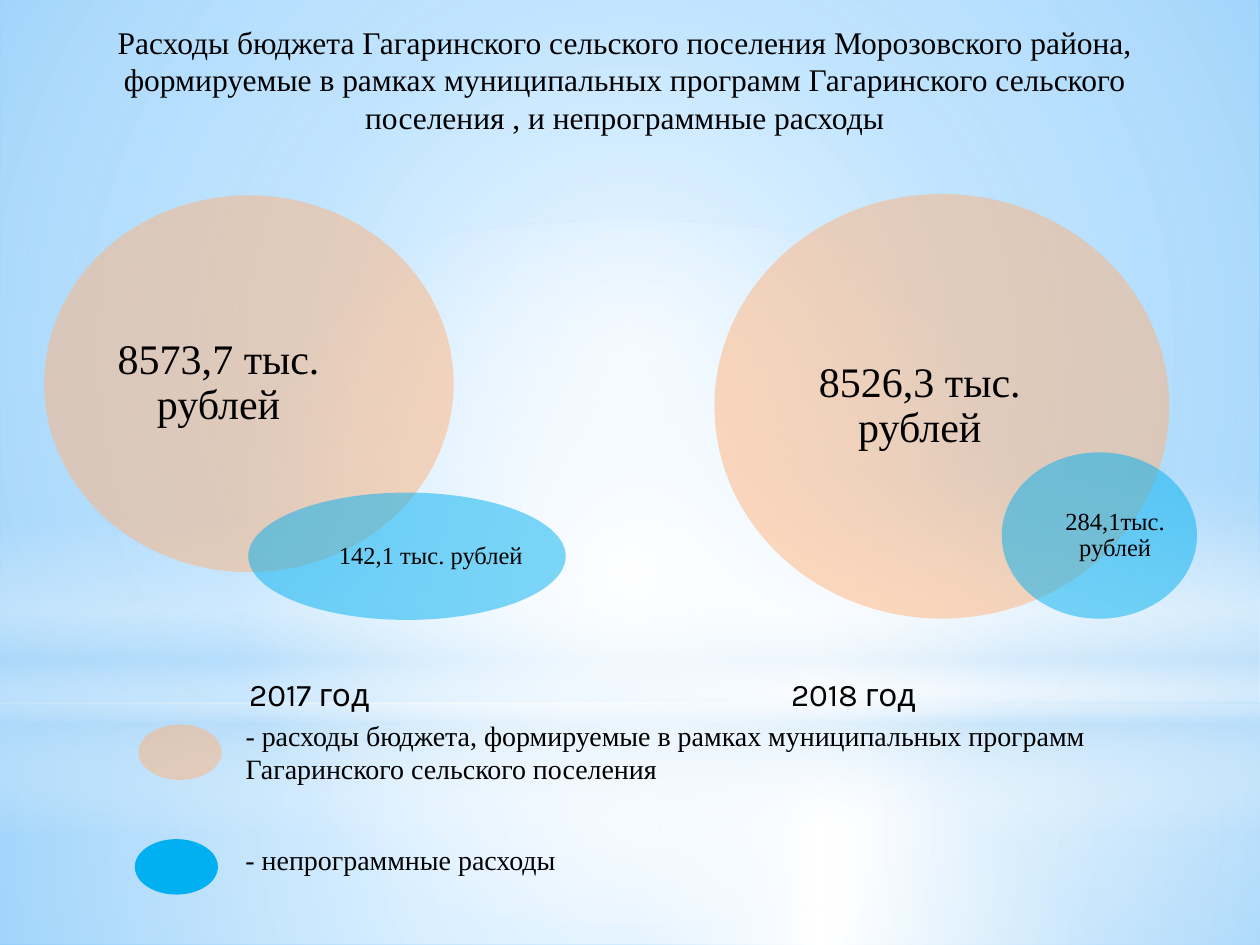
import pptx
import pptx.util
import pptx.dml.color
import pptx.enum.shapes
import pptx.enum.text
import pptx.oxml
import pptx.oxml.ns
import lxml.etree

W, H = pptx.util.Inches(10), pptx.util.Inches(7.5)
SERIF, SANS = "Times New Roman", "Karla"
COLORS = {
    "text": "000000",
    "program": "FFB37A",
    "other": "00B0F0",
    "white": "FFFFFF",
    "haze": "B4DCFA",
    "sky": "9ED5FF",
    "deep": "5BB9FF",
}
SHAPES = pptx.enum.shapes.MSO_SHAPE
CENTER = pptx.enum.text.PP_ALIGN.CENTER
LEFT = pptx.enum.text.PP_ALIGN.LEFT
qn = pptx.oxml.ns.qn


def area(left, top, width, height):
    """Turn percentages of the slide's size into lengths."""
    return [int(size * share / 100)
            for size, share in zip((W, H, W, H), (left, top, width, height))]


def rgb(name):
    return pptx.dml.color.RGBColor.from_string(COLORS[name])


def set_alpha(color, percent):
    lxml.etree.SubElement(color, qn("a:alpha"), val=str(percent * 1000))


def make_gradient(props, stops, kind, focus=(50, 50, 50, 50)):
    """Swap the solid fill in props for a gradient of (position, color, alpha)."""
    grad = pptx.oxml.parse_xml(
        f'<a:gradFill {pptx.oxml.ns.nsdecls("a")} rotWithShape="1"/>')
    gs_list = lxml.etree.SubElement(grad, qn("a:gsLst"))
    for pos, name, alpha in stops:
        gs = lxml.etree.SubElement(gs_list, qn("a:gs"), pos=str(pos * 1000))
        color = lxml.etree.SubElement(gs, qn("a:srgbClr"), val=COLORS[name])
        if alpha < 100:
            set_alpha(color, alpha)
    if kind == "linear":
        lxml.etree.SubElement(grad, qn("a:lin"), ang="5400000", scaled="0")
    else:
        path = lxml.etree.SubElement(grad, qn("a:path"), path=kind)
        sides = {side: str(v * 1000) for side, v in zip("ltrb", focus)}
        lxml.etree.SubElement(path, qn("a:fillToRect"), **sides)
    props.replace(props.find(qn("a:solidFill")), grad)


def add_shape(s, shape, box, color, alpha=100):
    sp = s.shapes.add_shape(shape, *area(*box))
    sp.shadow.inherit = False
    sp.line.fill.background()
    sp.fill.solid()
    sp.fill.fore_color.rgb = rgb(color)
    if alpha < 100:
        fill = sp.element.spPr.find(qn("a:solidFill"))
        set_alpha(fill[0], alpha)
    return sp


def add_text(s, box, text, size, align=LEFT, font=SERIF):
    tf = s.shapes.add_textbox(*area(*box)).text_frame
    tf.word_wrap = True
    p = tf.paragraphs[0]
    p.alignment = align
    r = p.add_run()
    r.text = text
    r.font.size = pptx.util.Pt(size)
    r.font.name = font
    r.font.color.rgb = rgb("text")
    return tf


def add_amount(s, oval, color, label, text, size):
    """Translucent oval with its amount centred in the label area."""
    add_shape(s, SHAPES.OVAL, oval, color, 50)
    tf = add_text(s, label, text, size, CENTER)
    tf.margin_left = tf.margin_right = tf.margin_top = tf.margin_bottom = 0
    tf.vertical_anchor = pptx.enum.text.MSO_ANCHOR.MIDDLE
    tf.paragraphs[0].line_spacing = 0.9


def add_backdrop(s):
    s.background.fill.solid()
    s.background.fill.fore_color.rgb = rgb("white")
    make_gradient(s.element.find(".//" + qn("p:bgPr")),
                  [(0, "sky", 100), (60, "white", 100), (100, "deep", 100)],
                  "rect", (100, 100, 0, 0))
    layers = [
        (SHAPES.RECTANGLE, (0, 74.4, 100, 25.6), "circle",
         [(0, "white", 91), (37, "white", 76), (100, "haze", 79)]),
        (SHAPES.RECTANGLE, (0, 0, 100, 74.4), "circle",
         [(0, "white", 89), (48, "white", 62), (100, "haze", 79)]),
        (SHAPES.RECTANGLE, (0, 54.93, 100, 33.33), "linear",
         [(0, "white", 0), (29, "white", 30), (45, "haze", 40),
          (55, "white", 26), (65, "haze", 60), (100, "white", 0)]),
        (SHAPES.OVAL, (0, 23.33, 100, 74.4), "circle",
         [(0, "white", 100), (56, "white", 0)]),
    ]
    for shape, box, kind, stops in layers:
        sp = add_shape(s, shape, box, "white")
        make_gradient(sp.element.spPr, stops, kind)


def main():
    prs = pptx.Presentation()
    prs.slide_width, prs.slide_height = W, H
    s = prs.slides.add_slide(prs.slide_layouts[6])
    add_backdrop(s)
    add_text(s, (4.3, 1.73, 90.6, 13.47),
             "Расходы бюджета Гагаринского сельского поселения Морозовского "
             "района, формируемые в рамках муниципальных программ Гагаринского "
             "сельского поселения , и непрограммные расходы", 18, CENTER)

    amounts = [
        ((56.7, 20.53, 36.1, 44.93), "program",
         (60.1, 24.53, 25.8, 36.93), "8526,3 тыс. рублей", 24),
        ((79.5, 47.87, 15.5, 17.6), "other",
         (84.4, 50.27, 8.2, 12.8), "284,1тыс. рублей", 14),
        ((3.5, 20.67, 32.5, 39.87), "program",
         (8, 25.33, 18.7, 30.53), "8573,7 тыс. рублей", 24),
        ((19.7, 52.13, 25.2, 13.47), "other",
         (26.9, 53.73, 14.6, 10.27), "142,1 тыс. рублей", 14),
    ]
    for amount in amounts:
        add_amount(s, *amount)

    legend = [
        ((11, 76.67), "program", 50, (18.5, 75.33, 77.2, 8.53),
         "- расходы бюджета, формируемые в рамках муниципальных программ "
         "Гагаринского сельского поселения"),
        ((10.7, 88.8), "other", 100, (18.5, 88.53, 67.7, 4.93),
         "- непрограммные расходы"),
    ]
    for corner, color, alpha, box, text in legend:
        add_shape(s, SHAPES.OVAL, (*corner, 6.6, 5.87), color, alpha)
        add_text(s, box, text, 16)

    add_text(s, (11.7, 70.8, 25.7, 5.33), "2017 год", 18, CENTER, SANS)
    add_text(s, (61.8, 70.8, 32.7, 5.33), "2018 год", 18, LEFT, SANS)
    prs.save("out.pptx")


if __name__ == "__main__":
    main()
